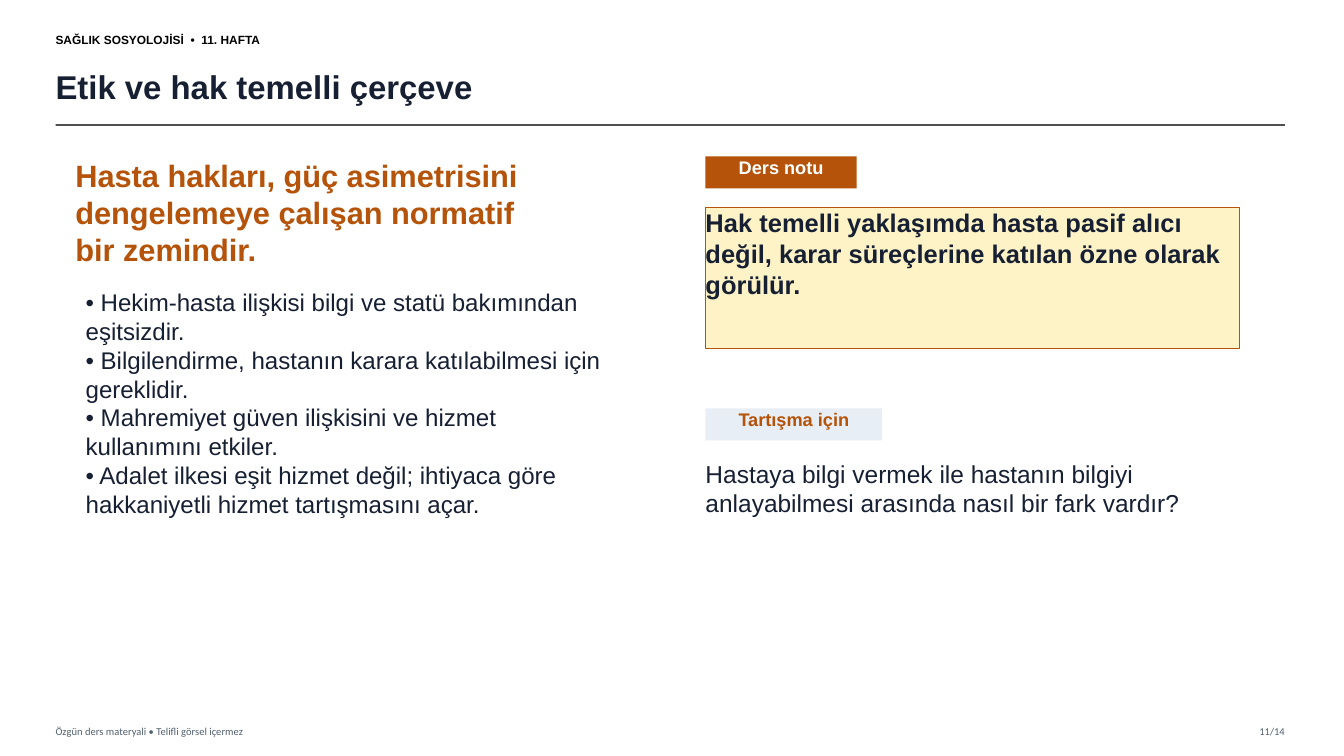
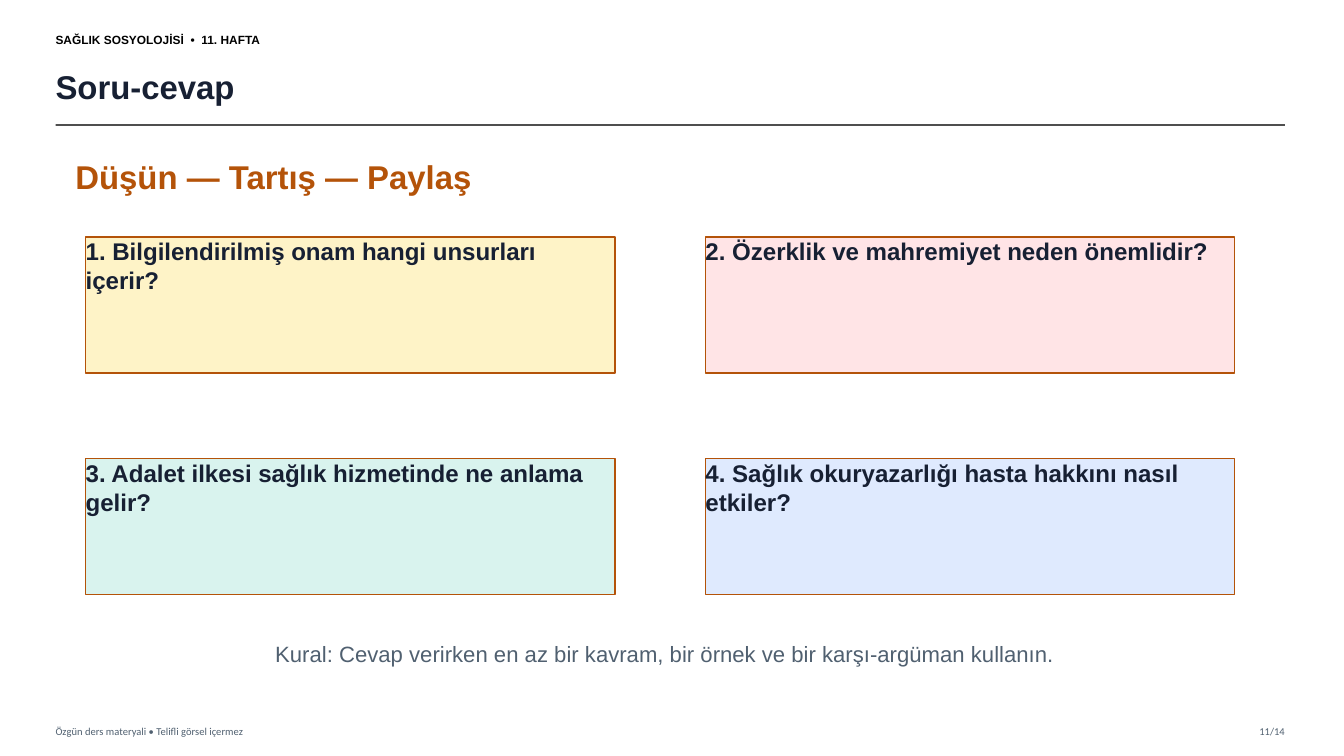
from lxml import etree
from pptx import Presentation
from pptx.dml.color import RGBColor
from pptx.enum.shapes import MSO_CONNECTOR, MSO_SHAPE
from pptx.enum.text import MSO_ANCHOR, PP_ALIGN
from pptx.oxml.ns import qn
from pptx.util import Cm, Pt

LEFT, CENTER, RIGHT = PP_ALIGN.LEFT, PP_ALIGN.CENTER, PP_ALIGN.RIGHT
TOP, MIDDLE = MSO_ANCHOR.TOP, MSO_ANCHOR.MIDDLE
RECTANGLE, STRAIGHT = MSO_SHAPE.RECTANGLE, MSO_CONNECTOR.STRAIGHT

COLORS = {
    "black": "000000", "ink": "172033", "muted": "506070", "rule": "333333",
    "accent": "B45309", "white": "FFFFFF", "mist": "E8EEF5",
    "cream": "FEF3C7", "rose": "FFE4E6", "mint": "D9F3EE", "sky": "DFEAFE",
}
COURSE = "SAĞLIK SOSYOLOJİSİ  •  11. HAFTA"
FOOTER = "Özgün ders materyali • Telifli görsel içermez"
PAGE = "11/14"
MARGIN, RIGHT_EDGE = 1.4, 32.38
HEADING_LEFT, CONTENT_TOP = 1.9, 3.94
COLUMNS = (2.16, 17.78)
COLUMN_WIDTH, NOTE_WIDTH = 13.34, 13.46


def rgb(name):
    return RGBColor.from_string(COLORS[name])


class Deck:
    def __init__(self):
        self.prs = Presentation()
        self.prs.slide_width, self.prs.slide_height = Cm(33.87), Cm(19.05)
        self.slide = None

    def new_slide(self, title):
        self.slide = self.prs.slides.add_slide(self.prs.slide_layouts[6])
        background = self.slide.background.fill
        background.solid()
        background.fore_color.rgb = rgb("white")
        self.text((MARGIN, 0.64, 9.14, 0.71), [COURSE], 8.5, "black", bold=True, anchor=MIDDLE)
        self.text((MARGIN, 1.47, 30.35, 1.4), [title], 23.5, bold=True, anchor=MIDDLE)
        self.rule(3.15)
        footer = {"size": 7.5, "color": "muted", "font": "Calibri", "anchor": MIDDLE}
        self.text((MARGIN, 18.14, 15.24, 0.56), [FOOTER], **footer)
        self.text((RIGHT_EDGE - 1.65, 18.14, 1.65, 0.56), [PAGE], align=RIGHT, **footer)

    def rule(self, y):
        line = self.slide.shapes.add_connector(
            STRAIGHT, Cm(MARGIN), Cm(y), Cm(RIGHT_EDGE), Cm(y))
        line.line.color.rgb = rgb("rule")
        line.line.width = Pt(1.2)
        properties = line._element.spPr
        color = properties.find(".//" + qn("a:srgbClr"))
        etree.SubElement(color, qn("a:alpha")).set("val", "85000")
        etree.SubElement(properties, qn("a:effectLst"))

    def text(self, box, paragraphs, size, color="ink", **style):
        shape = self.slide.shapes.add_textbox(*map(Cm, box))
        self.fill_text(shape.text_frame, paragraphs, size, color, **style)

    def panel(self, box, label, size, fill, color="ink", border=None, align=LEFT):
        shape = self.slide.shapes.add_shape(RECTANGLE, *map(Cm, box))
        shape.shadow.inherit = False
        shape.fill.solid()
        shape.fill.fore_color.rgb = rgb(fill)
        if border:
            shape.line.color.rgb = rgb(border)
            shape.line.width = Pt(1)
        else:
            shape.line.fill.background()
        self.fill_text(shape.text_frame, [label], size, color, bold=True, align=align)

    def tag(self, top, width, label, fill, color):
        self.panel((COLUMNS[1], top, width, 0.81), label, 13, fill, color, align=CENTER)

    def card(self, box, label, size, fill):
        self.panel(box, label, size, fill, border="accent")

    def fill_text(self, frame, paragraphs, size, color, bold=False, font="Arial",
                  align=LEFT, anchor=TOP):
        frame.word_wrap = True
        frame.vertical_anchor = anchor
        frame.margin_left = frame.margin_right = 0
        frame.margin_top = frame.margin_bottom = 0
        for index, content in enumerate(paragraphs):
            paragraph = frame.add_paragraph() if index else frame.paragraphs[0]
            paragraph.alignment = align
            run = paragraph.add_run()
            run.text = content
            run.font.name = font
            run.font.size = Pt(size)
            run.font.bold = bold
            run.font.color.rgb = rgb(color)


def ethics_slide(deck):
    deck.new_slide("Etik ve hak temelli çerçeve")
    left, right = COLUMNS
    deck.text((HEADING_LEFT, CONTENT_TOP, 11.68, 2.54),
              ["Hasta hakları, güç asimetrisini dengelemeye çalışan normatif bir zemindir."],
              22, "accent", bold=True)
    deck.text((left, 7.24, COLUMN_WIDTH, 6.86), [
        "• Hekim-hasta ilişkisi bilgi ve statü bakımından eşitsizdir.",
        "• Bilgilendirme, hastanın karara katılabilmesi için gereklidir.",
        "• Mahremiyet güven ilişkisini ve hizmet kullanımını etkiler.",
        "• Adalet ilkesi eşit hizmet değil; ihtiyaca göre hakkaniyetli hizmet "
        "tartışmasını açar.",
    ], 17.2)
    deck.tag(CONTENT_TOP, 3.81, "Ders notu", "accent", "white")
    deck.card((right, 5.23, NOTE_WIDTH, 3.56),
              "Hak temelli yaklaşımda hasta pasif alıcı değil, karar süreçlerine "
              "katılan özne olarak görülür.", 18.2, "cream")
    deck.tag(10.29, 4.45, "Tartışma için", "mist", "accent")
    deck.text((right, 11.56, NOTE_WIDTH, 3.18),
              ["Hastaya bilgi vermek ile hastanın bilgiyi anlayabilmesi arasında "
               "nasıl bir fark vardır?"], 17.5)


def questions_slide(deck):
    deck.new_slide("Soru-cevap")
    deck.text((HEADING_LEFT, CONTENT_TOP, 14.48, 1.27),
              ["Düşün — Tartış — Paylaş"], 23.5, "accent", bold=True)
    questions = [
        ("1. Bilgilendirilmiş onam hangi unsurları içerir?", "cream"),
        ("2. Özerklik ve mahremiyet neden önemlidir?", "rose"),
        ("3. Adalet ilkesi sağlık hizmetinde ne anlama gelir?", "mint"),
        ("4. Sağlık okuryazarlığı hasta hakkını nasıl etkiler?", "sky"),
    ]
    first_row, row_pitch = 5.97, 5.59
    for index, (question, fill) in enumerate(questions):
        row, column = divmod(index, len(COLUMNS))
        top = first_row + row * row_pitch
        deck.card((COLUMNS[column], top, COLUMN_WIDTH, 3.43), question, 17.2, fill)
    deck.text((2.54, 16.13, 28.45, 0.89),
              ["Kural: Cevap verirken en az bir kavram, bir örnek ve bir "
               "karşı-argüman kullanın."], 15.8, "muted", align=CENTER)


def main():
    deck = Deck()
    ethics_slide(deck)
    questions_slide(deck)
    deck.prs.save("out.pptx")


if __name__ == "__main__":
    main()
